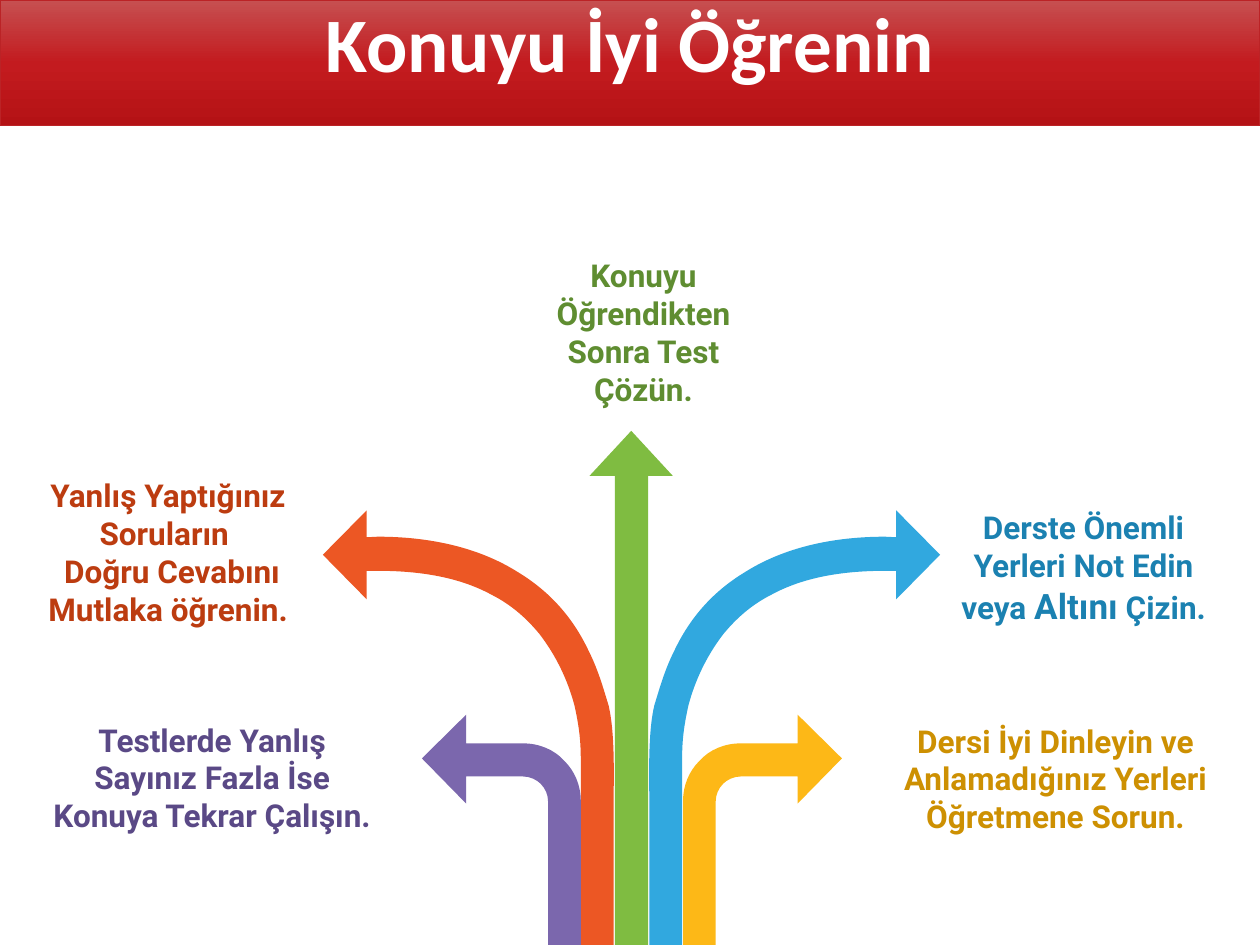
from copy import deepcopy

from lxml import etree
from pptx import Presentation
from pptx import util as u
from pptx.dml.color import RGBColor
from pptx.enum import shapes, text
from pptx.oxml.ns import qn

WHITE = RGBColor(0xFF, 0xFF, 0xFF)
BANNER_STOPS = [
    (0, RGBColor(0xC6, 0x50, 0x51)),
    (0.5, RGBColor(0xC3, 0x1B, 0x1F)),
    (1, RGBColor(0xB4, 0x12, 0x15)),
]
BANNER_EDGE = RGBColor(0xBB, 0x23, 0x26)
GREEN, GREEN_TEXT = RGBColor(0x7F, 0xBC, 0x41), RGBColor(0x5F, 0x8D, 0x31)
ORANGE, ORANGE_TEXT = RGBColor(0xEC, 0x57, 0x24), RGBColor(0xBC, 0x3C, 0x10)
BLUE, BLUE_TEXT = RGBColor(0x31, 0xA8, 0xDF), RGBColor(0x1B, 0x81, 0xB1)
PURPLE, PURPLE_TEXT = RGBColor(0x7B, 0x67, 0xAD), RGBColor(0x5A, 0x49, 0x86)
YELLOW, YELLOW_TEXT = RGBColor(0xFD, 0xB8, 0x17), RGBColor(0xCD, 0x90, 0x02)

STRAIGHT_ARROW = [
    [(384.5, 272)], [(360.7, 246.2)], [(336.8, 272)], [(351.4, 272)],
    [(351.4, 554.4)], [(370.3, 554.4)], [(370.3, 272)],
]
WIDE_ARROW = [
    [(209.6, 291.6)], [(184.5, 317)], [(209.6, 342.5)], [(209.6, 326.2)], [(216, 326.2)],
    [(244.1, 326.2), (265, 331.2), (280.8, 339.8)],
    [(292.3, 345.6), (301, 353.5), (308.2, 362.2)],
    [(318.2, 375.1), (324.7, 389.5), (328.3, 403.2)],
    [(331.2, 416.2), (331.9, 424.1), (331.9, 434.9)],
    [(331.9, 545)], [(350.6, 545)], [(350.6, 456.5)],
    [(351.4, 420.5), (349.2, 409.7), (347.8, 403.2)],
    [(344.9, 393.8), (342, 383), (336.2, 371.5)],
    [(328.3, 355), (316.1, 339.1), (295.9, 326.9)],
    [(276.5, 314.6), (249.8, 306.7), (216, 306.7)],
    [(209.6, 307)],
]
TIGHT_ARROW = [
    [(241.1, 433.4)], [(266.4, 459.2)], [(266.4, 443.7)], [(298.8, 443.7)],
    [(303.1, 443.7), (306.7, 445.7), (308.9, 447.8)],
    [(311.8, 450.7), (313.2, 454.3), (313.2, 457.9)],
    [(313.2, 545)], [(331.9, 545)], [(331.9, 457.9)],
    [(331.9, 448.6), (328.3, 440.6), (322.6, 434.9)],
    [(316.8, 428.4), (308.2, 424.8), (298.8, 424.8)],
    [(266.4, 424.8)], [(266.4, 408.4)],
]


def mirror(segments, edge_sum):
    return [[(edge_sum - x, y) for x, y in segment] for segment in segments]


def bend(arrow, segments):
    lines = list(arrow._element.iter(qn("a:lnTo")))
    for line, segment in zip(lines, segments):
        if len(segment) == 1:
            continue
        curve = etree.SubElement(line.getparent(), qn("a:cubicBezTo"))
        for x, y in segment:
            point = etree.SubElement(curve, qn("a:pt"))
            point.set("x", str(u.Pt(x) - arrow.left))
            point.set("y", str(u.Pt(y) - arrow.top))
        line.getparent().replace(line, curve)


def add_arrow(page, segments, color):
    ends = [(u.Pt(x), u.Pt(y)) for x, y in (segment[-1] for segment in segments)]
    builder = page.shapes.build_freeform(*ends[0])
    builder.add_line_segments(ends[1:] + ends[:1], close=True)
    arrow = builder.convert_to_shape()
    bend(arrow, segments[1:])
    arrow.shadow.inherit = False
    arrow.fill.solid()
    arrow.fill.fore_color.rgb = color
    arrow.line.fill.background()


def add_label(page, bounds, color, paragraphs):
    box = page.shapes.add_textbox(*map(u.Pt, bounds))
    frame = box.text_frame
    frame.word_wrap = True
    frame.auto_size = text.MSO_AUTO_SIZE.SHAPE_TO_FIT_TEXT
    for index, spans in enumerate(paragraphs):
        para = frame.paragraphs[0] if index == 0 else frame.add_paragraph()
        para.alignment = text.PP_ALIGN.CENTER
        para.font.name = "Roboto"
        para.font.bold = True
        para.font.size = u.Pt(18)
        para.font.color.rgb = color
        for words, size in spans:
            span = para.add_run()
            span.text = words
            if size != 18:
                span.font.size = u.Pt(size)


def add_banner(page, title):
    banner = page.shapes.add_shape(
        shapes.MSO_SHAPE.RECTANGLE, u.Pt(0), u.Pt(0), u.Pt(720), u.Pt(72))
    banner.shadow.inherit = False
    banner.fill.gradient()
    banner.fill.gradient_angle = 270
    stop_list = banner._element.spPr.find(qn("a:gradFill")).find(qn("a:gsLst"))
    stop_list.insert(1, deepcopy(stop_list[0]))
    for stop, (position, color) in zip(banner.fill.gradient_stops, BANNER_STOPS):
        stop.position = position
        stop.color.rgb = color
    banner.line.color.rgb = BANNER_EDGE
    banner.line.width = u.Pt(0.5)
    frame = banner.text_frame
    frame.word_wrap = True
    frame.vertical_anchor = text.MSO_ANCHOR.TOP
    para = frame.paragraphs[0]
    para.text = title
    para.alignment = text.PP_ALIGN.CENTER
    para.line_spacing = 0.9
    para.font.name = "Calibri"
    para.font.size = u.Pt(44)
    para.font.bold = True
    para.font.color.rgb = WHITE


def main():
    deck = Presentation()
    deck.slide_width, deck.slide_height = u.Pt(720), u.Pt(540)
    page = deck.slides.add_slide(deck.slide_layouts[6])

    add_arrow(page, STRAIGHT_ARROW, GREEN)
    add_arrow(page, WIDE_ARROW, ORANGE)
    add_arrow(page, mirror(WIDE_ARROW, 721.7), BLUE)
    add_arrow(page, TIGHT_ARROW, PURPLE)
    add_arrow(page, mirror(TIGHT_ARROW, 722.2), YELLOW)

    add_label(page, (536.4, 287, 165.6, 74.9), BLUE_TEXT, [
        [("Derste Önemli Yerleri Not Edin veya ", 18), ("Altını", 20), (" Çizin.", 18)]])
    add_label(page, (503, 408.8, 200.2, 72.7), YELLOW_TEXT, [
        [("Dersi İyi Dinleyin ve Anlamadığınız Yerleri Öğretmene Sorun.", 18)]])
    add_label(page, (0, 268.6, 192.2, 94.3), ORANGE_TEXT, [
        [("Yanlış Yaptığınız Soruların ", 18)],
        [(" Doğru Cevabını Mutlaka öğrenin.", 18)]])
    add_label(page, (20.8, 408.2, 200.9, 94.3), PURPLE_TEXT, [
        [("Testlerde Yanlış Sayınız Fazla İse Konuya Tekrar Çalışın.", 18)]])
    add_label(page, (292.1, 143, 151.2, 94.3), GREEN_TEXT, [
        [("Konuyu Öğrendikten Sonra Test Çözün.", 18)]])
    add_banner(page, "Konuyu İyi Öğrenin")

    deck.save("out.pptx")


if __name__ == "__main__":
    main()
